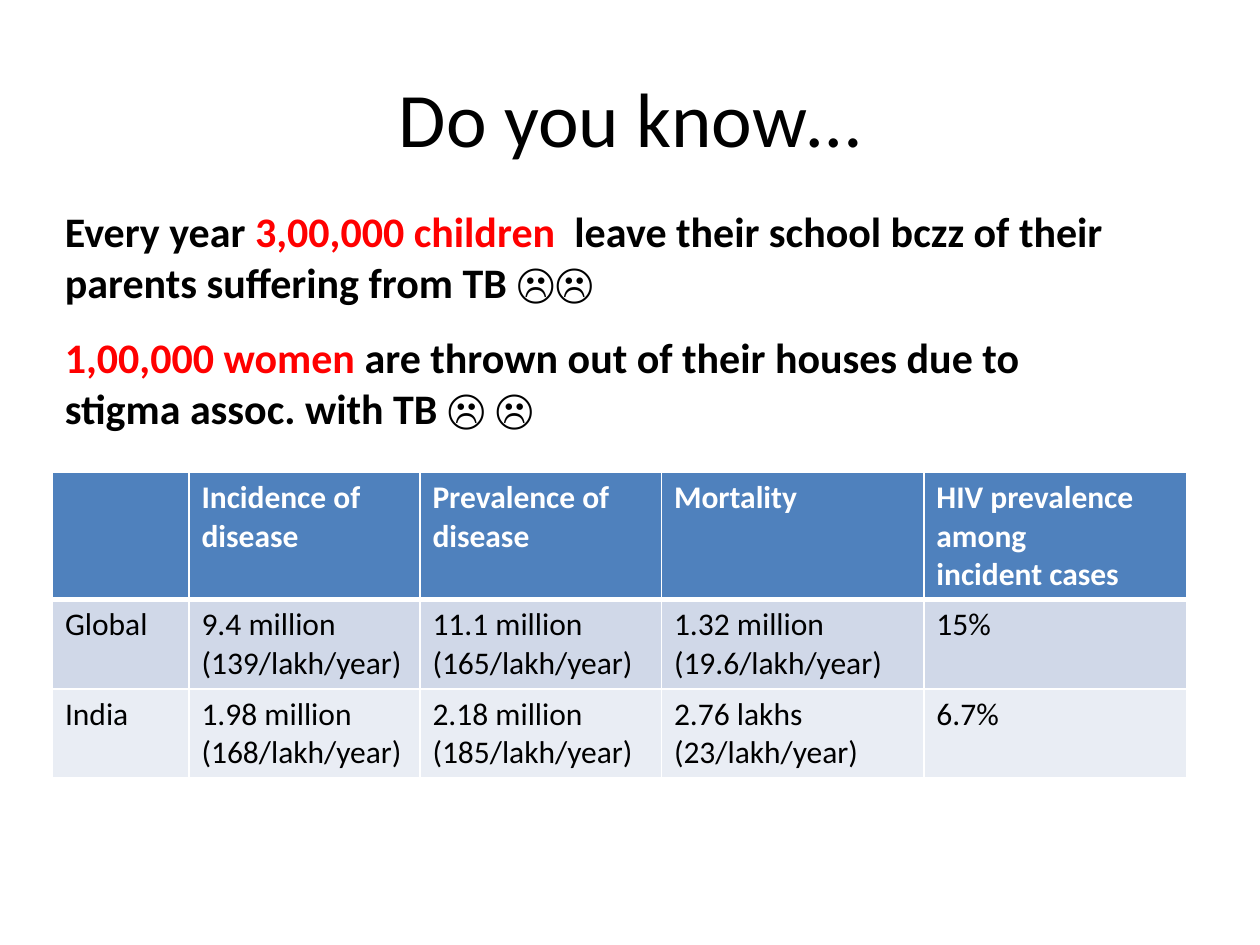
from dataclasses import dataclass

import pptx
import pptx.dml.color
import pptx.enum.text
import pptx.oxml
import pptx.oxml.ns
import pptx.util
from pptx.dml.color import RGBColor
from pptx.util import Pt

BLACK = RGBColor(0x00, 0x00, 0x00)
WHITE = RGBColor(0xFF, 0xFF, 0xFF)
RED = RGBColor(0xFF, 0x00, 0x00)
BLUE = RGBColor(0x4F, 0x81, 0xBD)
BAND_DARK = RGBColor(0xD0, 0xD8, 0xE8)
BAND_LIGHT = RGBColor(0xE9, 0xED, 0xF4)
FONT = "Calibri"


@dataclass(frozen=True)
class Span:
    text: str
    color: RGBColor = BLACK


@dataclass(frozen=True)
class TextBlock:
    left: float
    top: float
    width: float
    height: float
    spans: tuple[Span, ...]
    size: float = 24
    bold: bool = True
    align: pptx.enum.text.PP_ALIGN = pptx.enum.text.PP_ALIGN.LEFT
    anchor: pptx.enum.text.MSO_ANCHOR = pptx.enum.text.MSO_ANCHOR.TOP


@dataclass(frozen=True)
class TableRow:
    height: float
    fill: RGBColor
    cells: tuple[str, ...]
    color: RGBColor = BLACK
    bold: bool = False


BLOCKS = (
    TextBlock(36, 21.6, 648, 90, (Span("Do you know…"),), size=44, bold=False,
              align=pptx.enum.text.PP_ALIGN.CENTER,
              anchor=pptx.enum.text.MSO_ANCHOR.MIDDLE),
    TextBlock(30, 114, 624, 65.5, (
        Span("Every year "),
        Span("3,00,000 children ", RED),
        Span(" leave their school bczz of their parents suffering from TB ☹☹"),
    )),
    TextBlock(30, 186, 600, 298, (
        Span("1,00,000 women", RED),
        Span(" are thrown out of their houses due to stigma assoc. with TB ☹ ☹"),
    )),
)

COLUMN_WIDTHS = (78, 132, 138, 150, 150)
ROWS = (
    TableRow(72.6, BLUE, ("", "Incidence of\ndisease", "Prevalence of\ndisease",
                          "Mortality", "HIV prevalence among\nincident cases"),
             WHITE, True),
    TableRow(51, BAND_DARK, ("Global", "9.4 million\n(139/lakh/year)",
                             "11.1 million\n(165/lakh/year)",
                             "1.32 million\n(19.6/lakh/year)", "15%")),
    TableRow(51, BAND_LIGHT, ("India", "1.98 million\n(168/lakh/year)",
                              "2.18 million\n(185/lakh/year)",
                              "2.76 lakhs\n(23/lakh/year)", "6.7%")),
)


def style_font(font, size: float, color: RGBColor, bold: bool) -> None:
    font.name = FONT
    font.size = Pt(size)
    font.bold = bold
    font.color.rgb = color


def draw_text(page, block: TextBlock) -> None:
    box = page.shapes.add_textbox(Pt(block.left), Pt(block.top),
                                  Pt(block.width), Pt(block.height))
    frame = box.text_frame
    frame.word_wrap = True
    frame.vertical_anchor = block.anchor
    para = frame.paragraphs[0]
    para.alignment = block.align
    for part in block.spans:
        span = para.add_run()
        span.text = part.text
        style_font(span.font, block.size, part.color, block.bold)


def set_borders(cell, bottom: float) -> None:
    """Give the cell white borders, which must stand before its fill."""
    properties = cell._tc.get_or_add_tcPr()
    widths = {"lnL": 1, "lnR": 1, "lnT": 1, "lnB": bottom}
    for index, (side, width) in enumerate(widths.items()):
        properties.insert(index, pptx.oxml.parse_xml(
            f'<a:{side} {pptx.oxml.ns.nsdecls("a")} w="{Pt(width)}">'
            f'<a:solidFill><a:srgbClr val="{WHITE}"/></a:solidFill></a:{side}>'))


def draw_table(page, left: float, top: float, rows: tuple[TableRow, ...]) -> None:
    table = page.shapes.add_table(
        len(rows), len(COLUMN_WIDTHS), Pt(left), Pt(top),
        Pt(sum(COLUMN_WIDTHS)), Pt(sum(row.height for row in rows))).table
    for column, width in zip(table.columns, COLUMN_WIDTHS):
        column.width = Pt(width)
    for index, row in enumerate(rows):
        table.rows[index].height = Pt(row.height)
        for cell, text in zip(table.rows[index].cells, row.cells):
            cell.fill.solid()
            cell.fill.fore_color.rgb = row.fill
            # The header is set off by a thicker line
            set_borders(cell, 3 if index == 0 else 1)
            cell.text_frame.text = text
            for para in cell.text_frame.paragraphs:
                for span in para.runs:
                    style_font(span.font, 18, row.color, row.bold)


def main() -> None:
    deck = pptx.Presentation()
    deck.slide_width, deck.slide_height = Pt(720), Pt(540)
    page = deck.slides.add_slide(deck.slide_layouts[6])

    # Title, then the table, then the two statements above it
    title, *statements = BLOCKS
    draw_text(page, title)
    draw_table(page, 30, 270, ROWS)
    for statement in statements:
        draw_text(page, statement)

    deck.save("out.pptx")


if __name__ == "__main__":
    main()
